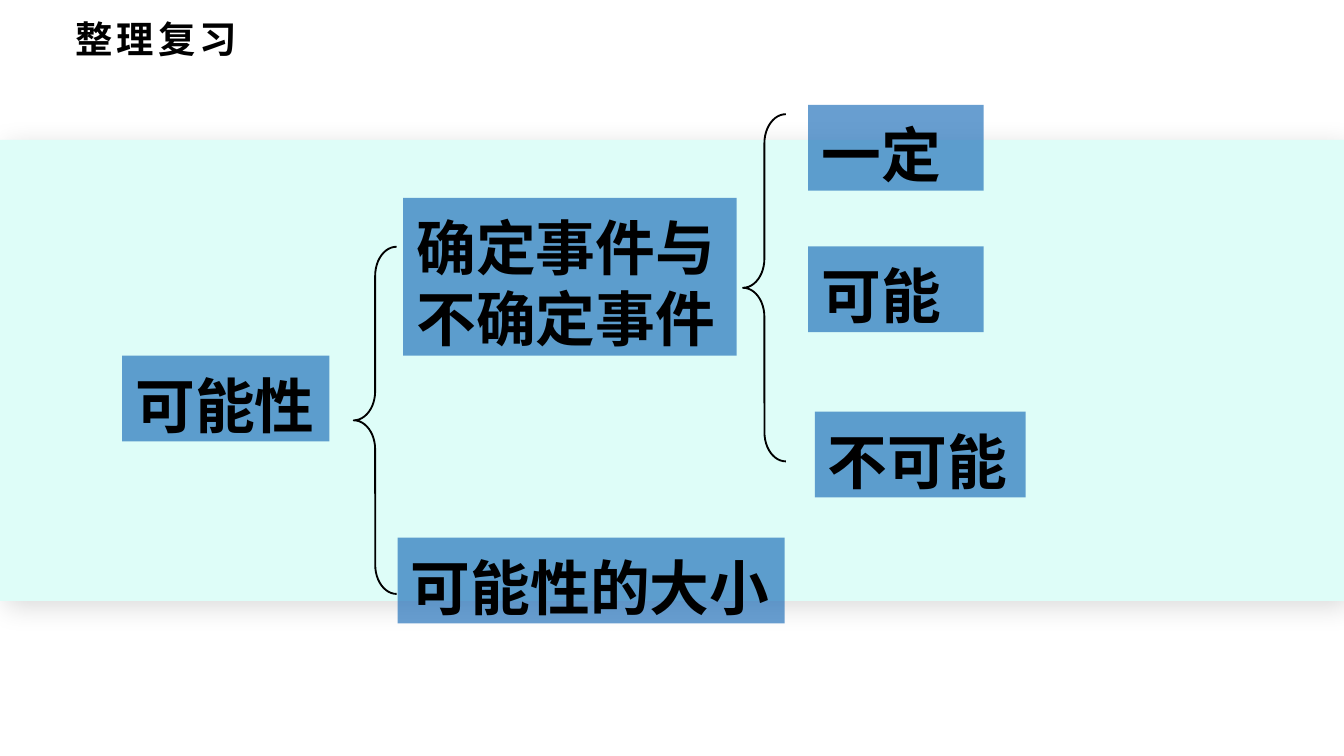
from dataclasses import dataclass

from pptx import Presentation
from pptx.dml.color import RGBColor
from pptx.enum import shapes as kinds, text as txt
from pptx.oxml import parse_xml
from pptx.oxml.ns import nsdecls, qn
from pptx.util import Pt

BLACK = RGBColor(0x00, 0x00, 0x00)
BLUE = RGBColor(0x1A, 0x6C, 0xB8)
MINT = RGBColor(0xDE, 0xFD, 0xF8)
FONT = "Noto Sans CJK SC"
WIDE, HIGH = 720, 405
LINE = 1.2  # line height in ems
ROW = 46  # height of a one-line box


@dataclass
class Box:
    label: str
    left: float
    top: float
    width: float
    height: float = ROW
    wrap: bool = True


@dataclass
class Brace:
    left: float
    top: float
    width: float = 23
    height: float = 186


BOXES = [
    Box("可能性", 65.5, 190.5, 111, wrap=False),
    Box("确定事件与不确定事件", 216, 106, 178.6, 84.6),
    Box("可能性的大小", 213, 288, 207.4, wrap=False),
    Box("一定", 433, 56.2, 94),
    Box("可能", 433, 132, 94),
    Box("不可能", 436.5, 220.5, 113),
]
BRACES = [Brace(189.5, 132.2), Brace(398, 61.2)]


def write(shape, label: str, size: float, wrap: bool, gap: int = 0) -> None:
    """Set bold left-aligned text on an even line pitch."""
    frame = shape.text_frame
    frame.text = label
    frame.word_wrap = wrap
    frame.auto_size = txt.MSO_AUTO_SIZE.NONE
    frame.vertical_anchor = txt.MSO_ANCHOR.TOP
    frame.margin_left = frame.margin_right = Pt(7.2)
    frame.margin_top = Pt(3.6 + size / 10)
    frame.margin_bottom = Pt(0)
    para = frame.paragraphs[0]
    para.alignment = txt.PP_ALIGN.LEFT
    para.line_spacing = Pt(size * LINE)
    font = para.runs[0].font
    font.size, font.bold, font.name = Pt(size), True, FONT
    font.color.rgb = BLACK
    props = para.runs[0]._r.get_or_add_rPr()
    props.append(parse_xml(f'<a:ea {nsdecls("a")} typeface="{FONT}"/>'))
    if gap:
        props.set("spc", str(gap * 100))


def add_rect(slide, box: Box, fill: RGBColor):
    rect = slide.shapes.add_shape(
        kinds.MSO_SHAPE.RECTANGLE,
        Pt(box.left), Pt(box.top), Pt(box.width), Pt(box.height))
    rect.shadow.inherit = False
    rect.fill.solid()
    rect.fill.fore_color.rgb = fill
    rect.line.fill.background()
    return rect


def add_band(slide) -> None:
    band = add_rect(slide, Box("", 0, 75, WIDE, 247), MINT)
    glow = band._element.spPr.find(qn("a:effectLst"))
    glow.append(parse_xml(
        f'<a:outerShdw {nsdecls("a")} blurRad="{Pt(15)}" dist="{Pt(5)}" '
        'dir="2700000" algn="tl" rotWithShape="0"><a:srgbClr val="000000">'
        '<a:alpha val="15000"/></a:srgbClr></a:outerShdw>'))


def add_box(slide, box: Box) -> None:
    rect = add_rect(slide, box, BLUE)
    tint = rect._element.spPr.find(qn("a:solidFill"))[0]
    tint.append(parse_xml(f'<a:alpha {nsdecls("a")} val="66000"/>'))
    write(rect, box.label, 32, box.wrap)


def add_brace(slide, brace: Brace) -> None:
    curve = slide.shapes.add_shape(
        kinds.MSO_SHAPE.LEFT_BRACE,
        Pt(brace.left), Pt(brace.top), Pt(brace.width), Pt(brace.height))
    curve.shadow.inherit = False
    curve.adjustments[0] = 0.68
    curve.adjustments[1] = 0.5
    curve.fill.background()
    curve.line.color.rgb = BLACK
    curve.line.width = Pt(1)


def main() -> None:
    deck = Presentation()
    deck.slide_width, deck.slide_height = Pt(WIDE), Pt(HIGH)
    slide = deck.slides.add_slide(deck.slide_layouts[5])

    # Title
    title = slide.shapes.title
    title.left, title.top = Pt(33.4), Pt(2.9)
    title.width, title.height = Pt(103), Pt(31.7)
    write(title, "整理复习", 20, False, gap=2)

    # Background band, then the tree of ideas
    add_band(slide)
    for brace in BRACES:
        add_brace(slide, brace)
    for box in BOXES:
        add_box(slide, box)

    deck.save("out.pptx")


if __name__ == "__main__":
    main()
